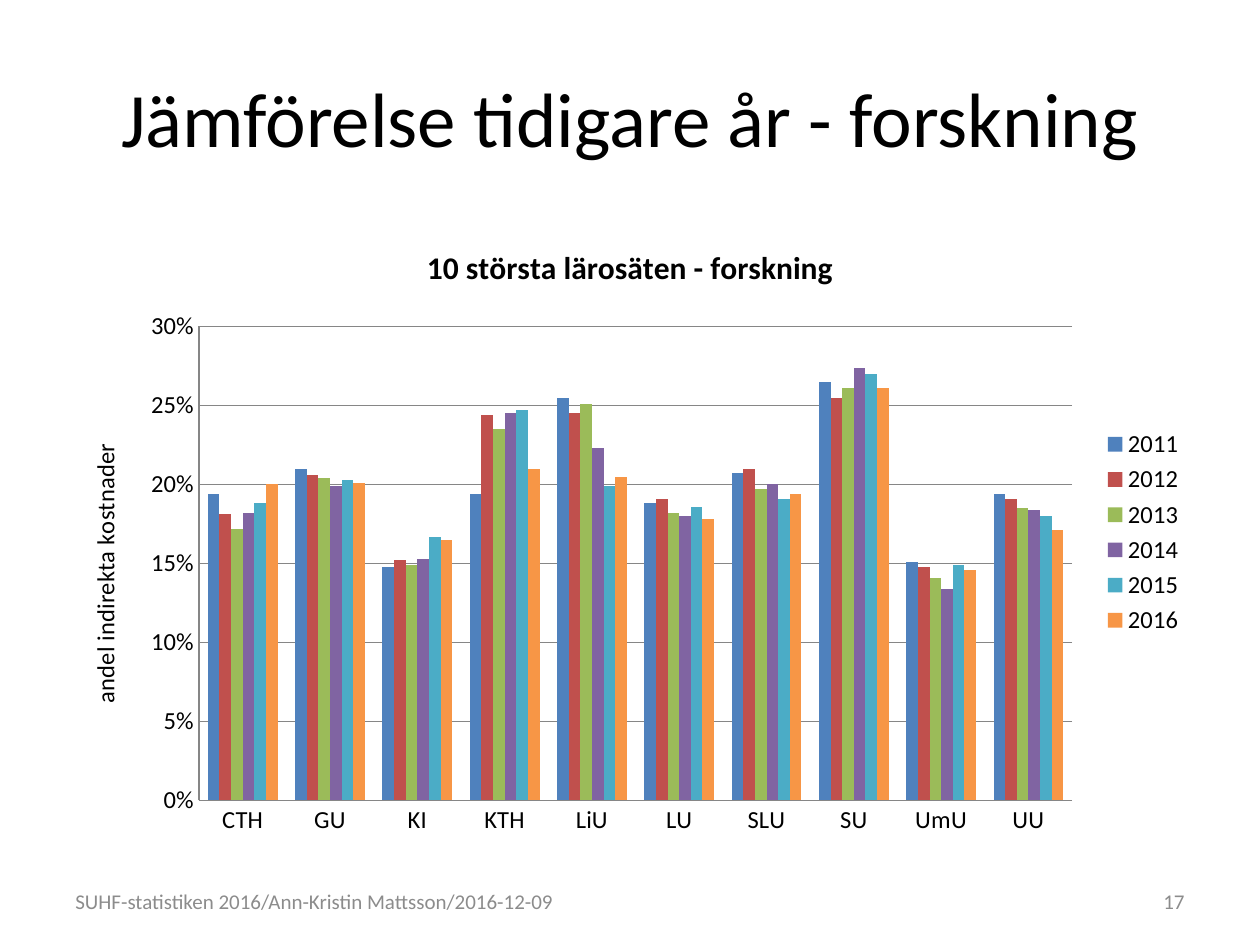
import pptx
import pptx.chart.data
import pptx.dml.color
import pptx.enum.chart
import pptx.enum.text
import pptx.oxml
import pptx.oxml.ns
import pptx.util

Inches = pptx.util.Inches
ALIGN = pptx.enum.text.PP_ALIGN
COLORS = {"text": "000000", "footer": "8C8C8C", "line": "868686"}
FONT = "Calibri"
CATEGORIES = ["CTH", "GU", "KI", "KTH", "LiU", "LU", "SLU", "SU", "UmU", "UU"]
SERIES = {
    "2011": ("4F81BD", [0.194, 0.21, 0.148, 0.194, 0.255, 0.188, 0.207, 0.265, 0.151, 0.194]),
    "2012": ("C0504D", [0.181, 0.206, 0.152, 0.244, 0.245, 0.191, 0.21, 0.255, 0.148, 0.191]),
    "2013": ("9BBB59", [0.172, 0.204, 0.149, 0.235, 0.251, 0.182, 0.197, 0.261, 0.141, 0.185]),
    "2014": ("8064A2", [0.182, 0.199, 0.153, 0.245, 0.223, 0.18, 0.2, 0.274, 0.134, 0.184]),
    "2015": ("4BACC6", [0.188, 0.203, 0.167, 0.247, 0.199, 0.186, 0.191, 0.27, 0.149, 0.18]),
    "2016": ("F79646", [0.2, 0.201, 0.165, 0.21, 0.205, 0.178, 0.194, 0.261, 0.146, 0.171]),
}
PLOT_AREA = {"x": 0.12, "y": 0.17, "w": 0.77, "h": 0.76}


def set_attributes(target, values):
    for name, value in values.items():
        setattr(target, name, value)


def rgb(color):
    return pptx.dml.color.RGBColor.from_string(color)


def format_font(font, size, color, bold=False):
    set_attributes(font, {"name": FONT, "size": pptx.util.Pt(size), "bold": bold})
    font.color.rgb = rgb(color)


def write_text(text_frame, text, size, color, alignment, bold=False):
    text_frame.text = text
    paragraph = text_frame.paragraphs[0]
    paragraph.alignment = alignment
    format_font(paragraph.runs[0].font, size, color, bold)


def place_title(slide, box):
    title = slide.shapes.title
    set_attributes(title, dict(zip(("left", "top", "width", "height"), box)))
    title.text_frame.vertical_anchor = pptx.enum.text.MSO_ANCHOR.MIDDLE
    write_text(title.text_frame, "Jämförelse tidigare år - forskning", 44,
               COLORS["text"], ALIGN.CENTER)


def place_footer(slide, box):
    left, top, width, height = box
    number_width = Inches(2.33)
    parts = [
        (left, Inches(4.5), "SUHF-statistiken 2016/Ann-Kristin Mattsson/2016-12-09", ALIGN.LEFT),
        (left + width - number_width, number_width, "17", ALIGN.RIGHT),
    ]
    for part_left, part_width, text, alignment in parts:
        text_frame = slide.shapes.add_textbox(part_left, top, part_width, height).text_frame
        set_attributes(text_frame, {
            "word_wrap": True,
            "vertical_anchor": pptx.enum.text.MSO_ANCHOR.MIDDLE,
        })
        write_text(text_frame, text, 12, COLORS["footer"], alignment)


def fix_plot_area(chart):
    plot_area = chart.element.find(".//" + pptx.oxml.ns.qn("c:plotArea"))
    for layout in plot_area.findall(pptx.oxml.ns.qn("c:layout")):
        plot_area.remove(layout)
    modes = '<c:layoutTarget val="inner"/><c:xMode val="edge"/><c:yMode val="edge"/>'
    sizes = "".join(f'<c:{name} val="{value}"/>' for name, value in PLOT_AREA.items())
    plot_area.insert(0, pptx.oxml.parse_xml(
        f'<c:layout {pptx.oxml.ns.nsdecls("c")}>'
        f'<c:manualLayout>{modes}{sizes}</c:manualLayout></c:layout>'))


def format_axes(chart):
    for axis in (chart.category_axis, chart.value_axis):
        axis.major_tick_mark = pptx.enum.chart.XL_TICK_MARK.NONE
        format_font(axis.tick_labels.font, 14, COLORS["text"])
        axis.format.line.color.rgb = rgb(COLORS["line"])
    axis = chart.value_axis
    set_attributes(axis, {"minimum_scale": 0, "maximum_scale": 0.3, "major_unit": 0.05,
                          "has_major_gridlines": True})
    axis.major_gridlines.format.line.color.rgb = rgb(COLORS["line"])
    set_attributes(axis.tick_labels, {"number_format": "0%", "number_format_is_linked": False})
    write_text(axis.axis_title.text_frame, "andel indirekta kostnader", 14,
               COLORS["text"], ALIGN.CENTER)


def place_chart(slide, box):
    data = pptx.chart.data.CategoryChartData(number_format="0%")
    data.categories = CATEGORIES
    for year, (color, values) in SERIES.items():
        data.add_series(year, values)
    chart = slide.shapes.add_chart(
        pptx.enum.chart.XL_CHART_TYPE.COLUMN_CLUSTERED, *box, data).chart
    format_font(chart.font, 10, COLORS["text"])
    write_text(chart.chart_title.text_frame, "10 största lärosäten - forskning", 18,
               COLORS["text"], ALIGN.CENTER, bold=True)
    chart.has_legend = True
    set_attributes(chart.legend, {
        "position": pptx.enum.chart.XL_LEGEND_POSITION.RIGHT,
        "include_in_layout": False,
    })
    format_font(chart.legend.font, 14, COLORS["text"])
    plot = chart.plots[0]
    set_attributes(plot, {"gap_width": 150, "overlap": 0, "vary_by_categories": False})
    for series in plot.series:
        series.format.fill.solid()
        series.format.fill.fore_color.rgb = rgb(SERIES[series.name][0])
    format_axes(chart)
    fix_plot_area(chart)


def main():
    presentation = pptx.Presentation()
    set_attributes(presentation, {"slide_width": Inches(10), "slide_height": Inches(7.5)})
    slide = presentation.slides.add_slide(presentation.slide_layouts[5])
    left, width = Inches(0.5), Inches(9)
    place_title(slide, (left, Inches(0.3), width, Inches(1.25)))
    place_footer(slide, (left, Inches(6.95), width, Inches(0.4)))
    place_chart(slide, (left, Inches(1.75), width, Inches(4.95)))
    presentation.save("out.pptx")


if __name__ == "__main__":
    main()
